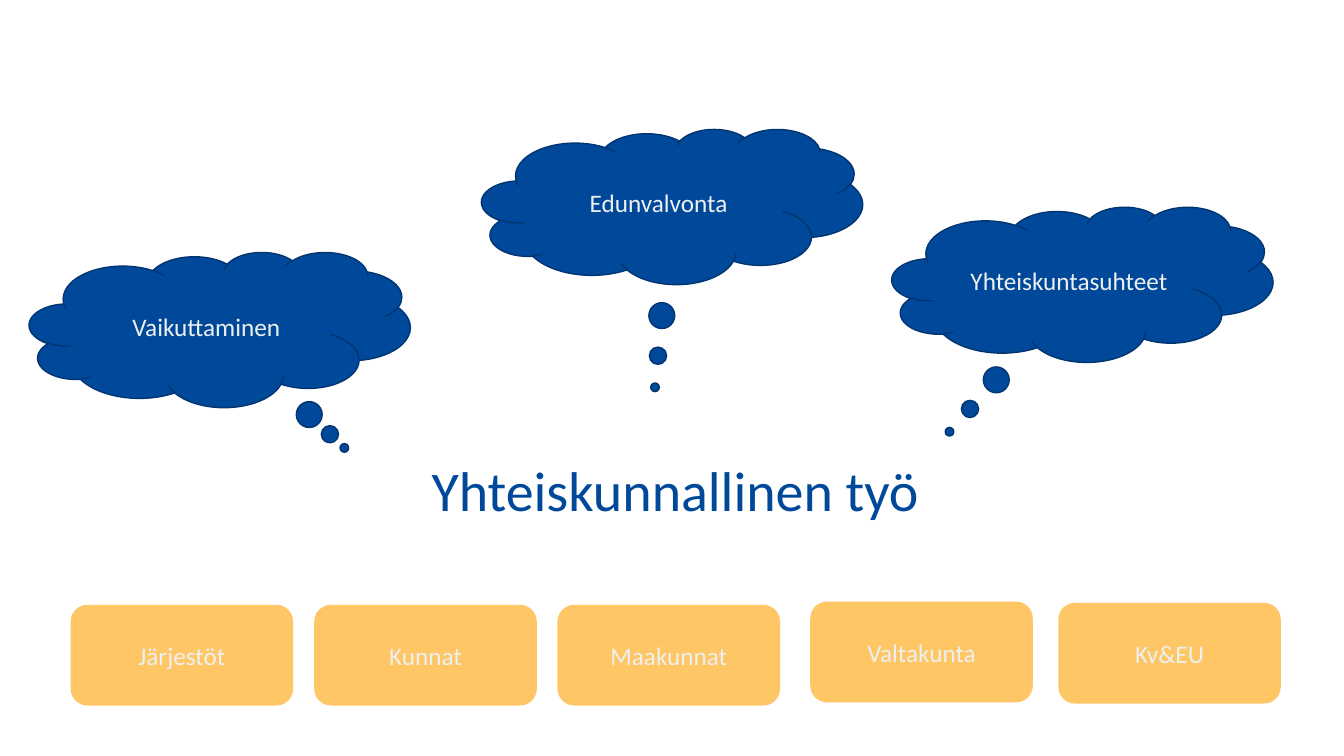
from pptx import Presentation
from pptx.dml.color import RGBColor
from pptx.enum.shapes import MSO_SHAPE
from pptx.enum.text import MSO_ANCHOR, MSO_AUTO_SIZE, PP_ALIGN
from pptx.util import Cm, Pt

CLOUD = MSO_SHAPE.CLOUD_CALLOUT
ROUNDED = MSO_SHAPE.ROUNDED_RECTANGLE
MIDDLE = MSO_ANCHOR.MIDDLE
CENTER = PP_ALIGN.CENTER
NO_AUTOFIT = MSO_AUTO_SIZE.NONE

BLUE = RGBColor(0x00, 0x48, 0x99)
DARK_BLUE = RGBColor(0x00, 0x35, 0x71)
YELLOW = RGBColor(0xFF, 0xC6, 0x66)
PALE = RGBColor(0xEE, 0xF0, 0xF0)
FONT = "Calibri"

THEMES = [
    ("Yhteiskuntasuhteet", 22.48, 5.21, (-0.349, 0.95)),
    ("Edunvalvonta", 12.14, 3.25, (-0.045, 1.165)),
    ("Vaikuttaminen", 0.74, 6.35, (0.327, 0.763)),
]
LEVELS = [
    ("Järjestöt", 1.78, 15.24),
    ("Kunnat", 7.92, 15.24),
    ("Maakunnat", 14.05, 15.24),
    ("Valtakunta", 20.42, 15.16),
    ("Kv&EU", 26.67, 15.19),
]


def write_text(shape, text, size, color):
    frame = shape.text_frame
    frame.word_wrap = True
    frame.vertical_anchor = MIDDLE
    paragraph = frame.paragraphs[0]
    paragraph.alignment = CENTER
    run = paragraph.add_run()
    run.text = text
    run.font.name = FONT
    run.font.size = Pt(size)
    run.font.color.rgb = color
    return frame


def place_title(slide, text):
    title = slide.shapes.title
    title.left, title.top = Cm(5.51), Cm(10.19)
    title.width, title.height = Cm(23.01), Cm(4.5)
    frame = write_text(title, text, 40, BLUE)
    frame.auto_size = NO_AUTOFIT
    frame.margin_left = frame.margin_right = 0
    frame.margin_top = frame.margin_bottom = 0
    frame.paragraphs[0].line_spacing = 0.9


def add_filled_shape(slide, kind, left, top, width, height, color, text):
    shape = slide.shapes.add_shape(kind, Cm(left), Cm(top), Cm(width), Cm(height))
    shape.shadow.inherit = False
    shape.fill.solid()
    shape.fill.fore_color.rgb = color
    write_text(shape, text, 18, PALE)
    return shape


def add_thought_cloud(slide, text, left, top, tail):
    cloud = add_filled_shape(slide, CLOUD, left, top, 9.6, 3.91, BLUE, text)
    cloud.line.color.rgb = DARK_BLUE
    cloud.line.width = Pt(1)
    cloud.adjustments[0], cloud.adjustments[1] = tail


def add_level_box(slide, text, left, top):
    box = add_filled_shape(slide, ROUNDED, left, top, 5.61, 2.54, YELLOW, text)
    box.line.fill.background()


def main():
    presentation = Presentation()
    presentation.slide_width = Cm(33.87)
    presentation.slide_height = Cm(19.05)
    title_only = presentation.slide_layouts.get_by_name("Title Only")
    slide = presentation.slides.add_slide(title_only)
    place_title(slide, "Yhteiskunnallinen työ")
    for theme in THEMES:
        add_thought_cloud(slide, *theme)
    for level in LEVELS:
        add_level_box(slide, *level)
    presentation.save("out.pptx")


if __name__ == "__main__":
    main()
